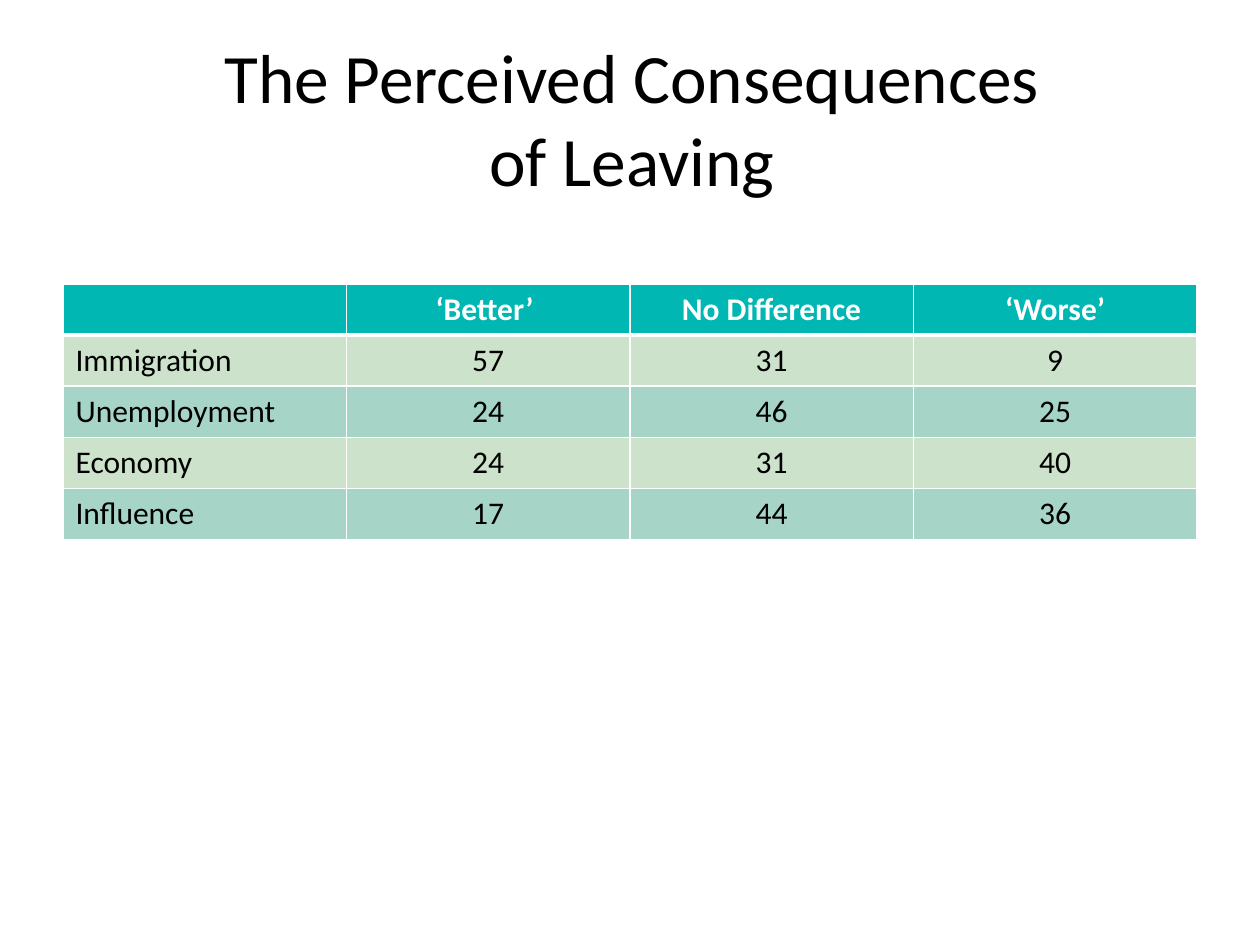
from lxml.etree import SubElement as Sub
from pptx import Presentation
from pptx.dml.color import RGBColor
from pptx.enum.text import MSO_ANCHOR as Anchor, PP_ALIGN as Align
from pptx.oxml.ns import qn
from pptx.util import Emu, Pt

SCALE = 914400 // 126
TITLE = "The Perceived Consequences of Leaving"
ROWS = [
    ("", "‘Better’ ", "No Difference", "‘Worse’"),
    ("Immigration", "57", "31", "9"),
    ("Unemployment", "24", "46", "25"),
    ("Economy", "24", "31", "40"),
    ("Influence", "17", "44", "36"),
]
HEAD, ODD, EVEN = "00B7B4", "CCE2CB", "A6D4C6"
WHITE, BLACK = "FFFFFF", "000000"


def px(num):
    """Turn pixels into EMU."""
    return Emu(num * SCALE)


def color(code):
    """Turn a hex string into a colour."""
    return RGBColor.from_string(code)


def style(para, size, code, bold, align):
    """Set the font and alignment of a paragraph."""
    font = para.font
    font.name, font.size, font.bold = "Calibri", Pt(size), bold
    font.color.rgb = color(code)
    para.alignment = align


def border(cell, side, width):
    """Draw a white line on one side of a cell."""
    line = Sub(cell._tc.get_or_add_tcPr(), qn(f"a:ln{side}"), w=str(Pt(width)))
    fill = Sub(line, qn("a:solidFill"))
    Sub(fill, qn("a:srgbClr"), val=WHITE)


def add_title(slide, left, top, width, height):
    """Place the title in its box."""
    title = slide.shapes.title
    title.left, title.top = px(left), px(top)
    title.width, title.height = px(width), px(height)
    frame = title.text_frame
    frame.text = TITLE
    frame.word_wrap = True
    frame.vertical_anchor = Anchor.MIDDLE
    style(frame.paragraphs[0], 39.6, BLACK, False, Align.CENTER)


def add_grid(slide, left, top, width, height):
    """Place the table of answers in its box."""
    count = len(ROWS), len(ROWS[0])
    box = map(px, (left, top, width, height))
    table = slide.shapes.add_table(*count, *box).table
    for row, texts in enumerate(ROWS):
        table.rows[row].height = px(height // count[0])
        head = row == 0
        shade = HEAD if head else ODD if row % 2 else EVEN
        for col, text in enumerate(texts):
            cell = table.cell(row, col)
            cell.text = text
            style(cell.text_frame.paragraphs[0], 18, WHITE if head else BLACK,
                  head, Align.CENTER if col else Align.LEFT)
            for side in "LRTB":
                thick = (row, side) in ((0, "B"), (1, "T"))
                border(cell, side, 3 if thick else 1)
            cell.fill.solid()
            cell.fill.fore_color.rgb = color(shade)


def main():
    """Build and save the slide."""
    deck = Presentation()
    deck.slide_width, deck.slide_height = px(1260), px(945)
    slide = deck.slides.add_slide(deck.slide_layouts[5])
    add_title(slide, 193, 38, 878, 158)
    add_grid(slide, 63, 284, 1134, 255)
    deck.save("out.pptx")


if __name__ == "__main__":
    main()
